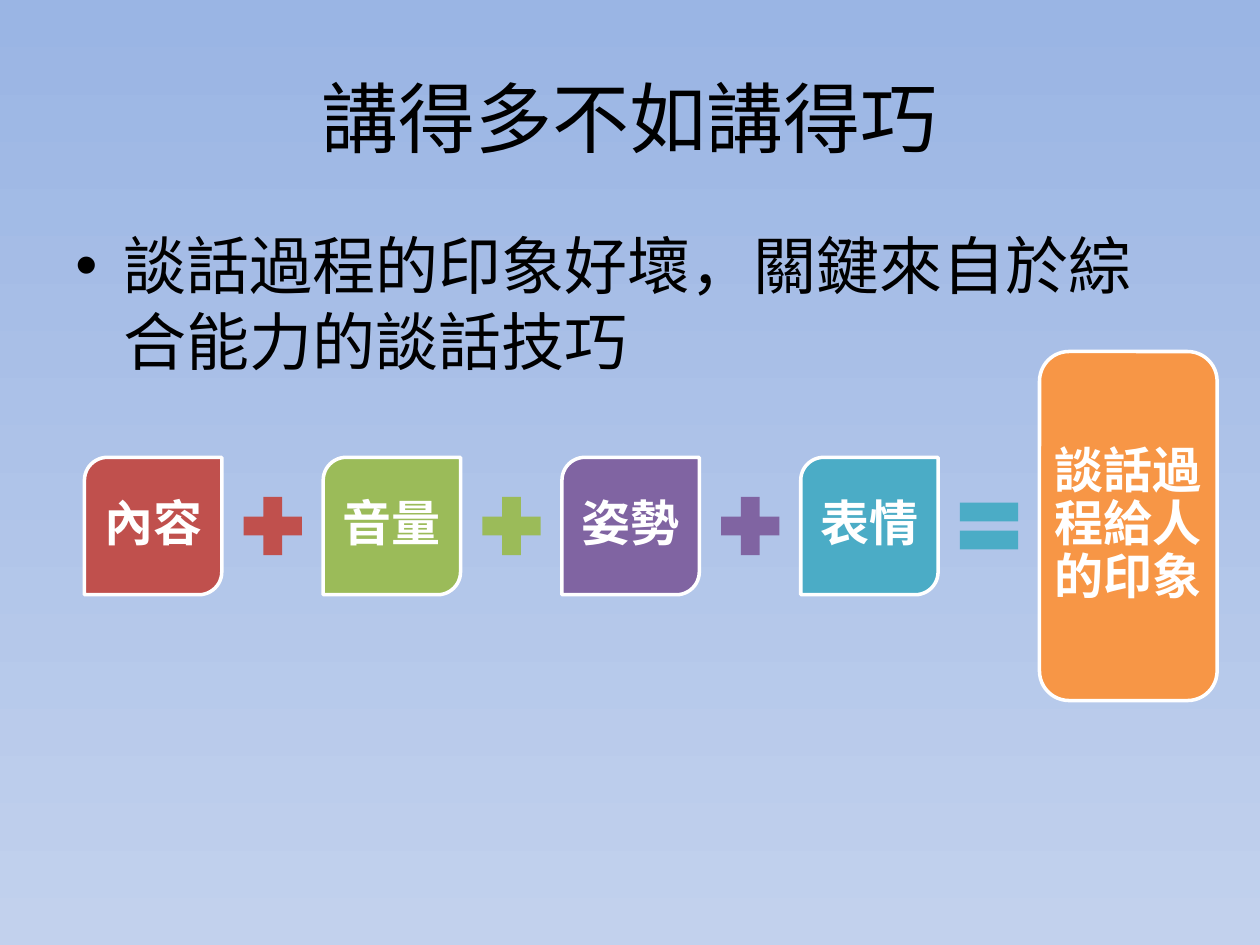
from lxml import etree
from pptx import Presentation
from pptx.dml.color import RGBColor
from pptx.enum.shapes import MSO_SHAPE
from pptx.enum.text import MSO_ANCHOR, PP_ALIGN
from pptx.oxml.ns import qn
from pptx.util import Inches, Pt

PLUS, EQUAL = MSO_SHAPE.MATH_PLUS, MSO_SHAPE.MATH_EQUAL
LEAF, ROUND = MSO_SHAPE.ROUND_2_DIAG_RECTANGLE, MSO_SHAPE.ROUNDED_RECTANGLE
MIDDLE, TOP = MSO_ANCHOR.MIDDLE, MSO_ANCHOR.TOP
CENTER, LEFT = PP_ALIGN.CENTER, PP_ALIGN.LEFT
FONT = "Noto Sans CJK SC"
COLORS = {
    "sky": "9AB5E4", "mist": "C2D1ED", "black": "000000", "white": "FFFFFF",
    "red": "C0504D", "green": "9BBB59", "purple": "8064A2",
    "teal": "4BACC6", "orange": "F79646",
}


def write(shape, text, size, color, align, anchor, bold=False):
    frame = shape.text_frame
    frame.word_wrap = True
    frame.vertical_anchor = anchor
    para = frame.paragraphs[0]
    para.alignment = align
    run = para.add_run()
    run.text = text
    look = {"name": FONT, "size": Pt(size), "bold": bold}
    for key, value in look.items():
        setattr(run.font, key, value)
    run.font.color.rgb = RGBColor.from_string(COLORS[color])
    east = etree.SubElement(run.font._element, qn("a:ea"))
    east.set("typeface", FONT)
    return para


def draw(kind, left, top, width, height, color, text=None):
    shape = slide.shapes.add_shape(
        kind, Inches(left), Inches(top), Inches(width), Inches(height))
    shape.shadow.inherit = False
    shape.fill.solid()
    shape.fill.fore_color.rgb = RGBColor.from_string(COLORS[color])
    if text is None:
        shape.line.fill.background()
        return
    shape.line.color.rgb = RGBColor.from_string(COLORS["white"])
    shape.line.width = Pt(2)
    for side in ("left", "top", "right", "bottom"):
        setattr(shape.text_frame, "margin_" + side, Inches(0.04))
    para = write(shape, text, 28, "white", CENTER, MIDDLE, True)
    para.line_spacing = 0.9


prs = Presentation()
prs.slide_width, prs.slide_height = Inches(10), Inches(7.5)
slide = prs.slides.add_slide(prs.slide_layouts[6])
back = slide.background.fill
back.gradient()
back.gradient_angle = 270
for stop, name in zip(back.gradient_stops, ("sky", "mist")):
    stop.color.rgb = RGBColor.from_string(COLORS[name])

title = slide.shapes.add_textbox(Inches(0.5), Inches(0.3), Inches(9), Inches(1.25))
write(title, "講得多不如講得巧", 44, "black", CENTER, MIDDLE)

body = slide.shapes.add_textbox(Inches(0.5), Inches(1.75), Inches(9), Inches(4.95))
para = write(body, "談話過程的印象好壞，關鍵來自於綜合能力的談話技巧",
             36, "black", LEFT, TOP)
props = para._p.get_or_add_pPr()
props.set("marL", str(Inches(0.38)))
props.set("indent", str(-Inches(0.38)))
face = etree.SubElement(props, qn("a:buFont"))
face.set("typeface", "Arial")
mark = etree.SubElement(props, qn("a:buChar"))
mark.set("char", "•")

parts = [
    ("內容", "red", PLUS), ("音量", "green", PLUS),
    ("姿勢", "purple", PLUS), ("表情", "teal", EQUAL),
]
for i, (text, color, sign) in enumerate(parts):
    left = 0.67 + i * 1.895
    draw(LEAF, left, 3.63, 1.09, 1.09, color, text)
    draw(sign, left + 1.18, 3.86, 0.63, 0.63, color)
draw(ROUND, 8.25, 2.79, 1.41, 2.77, "orange", "談話過程給人的印象")

prs.save("out.pptx")
